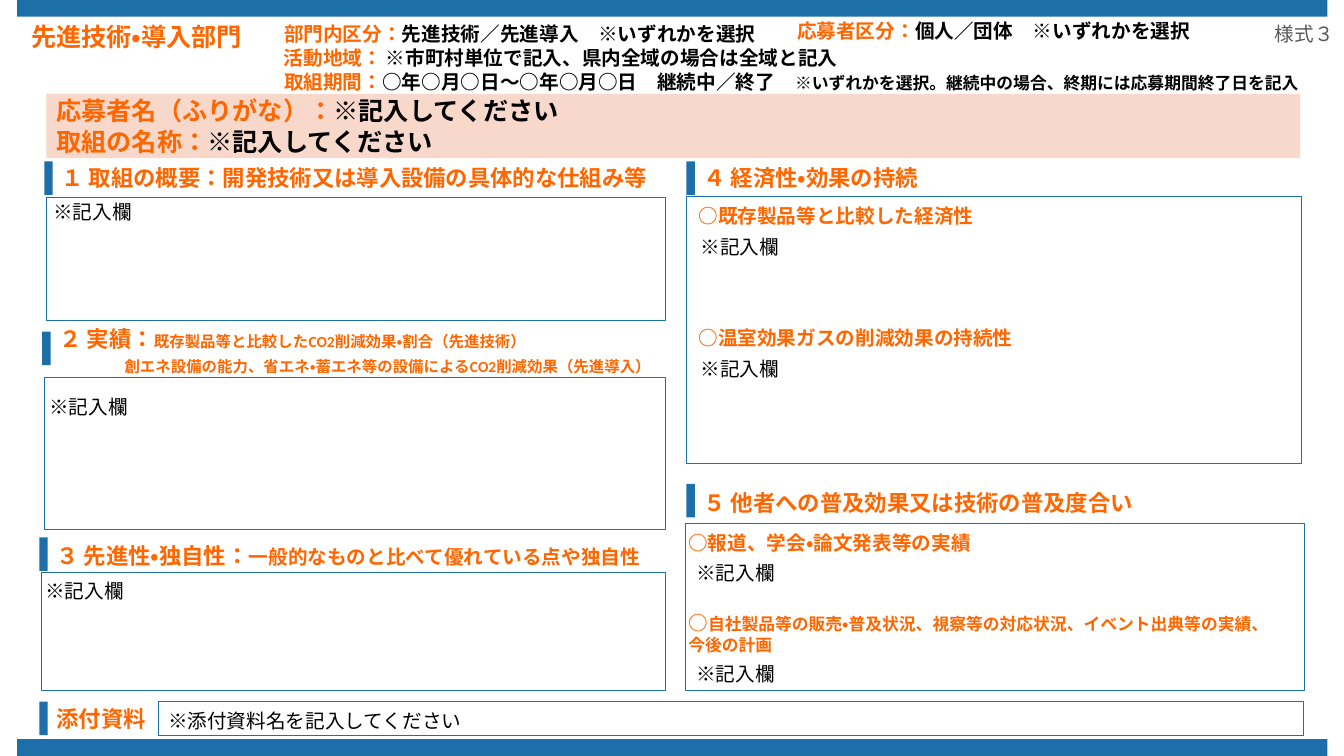
from pptx import Presentation
from pptx.dml.color import RGBColor
from pptx.enum.lang import MSO_LANGUAGE_ID
from pptx.enum.shapes import MSO_SHAPE
from pptx.enum.text import MSO_ANCHOR, PP_ALIGN
from pptx.util import Pt

RECT = MSO_SHAPE.RECTANGLE
MIDDLE = MSO_ANCHOR.MIDDLE
LEFT, CENTER = PP_ALIGN.LEFT, PP_ALIGN.CENTER
TONGUE = MSO_LANGUAGE_ID.JAPANESE
BLUE = RGBColor(0x1D, 0x6F, 0xA9)
ORANGE = RGBColor(0xFF, 0x66, 0x00)
PEACH = RGBColor(0xF8, 0xD8, 0xCA)
BLACK = RGBColor(0, 0, 0)
GRAY = RGBColor(0x59, 0x59, 0x59)
FONT = "Calibri"
WIDE, HIGH = 960, 540
NOTE = [("※記入欄", 14, BLACK)]


def rect(shapes, box, fill=None, line=None):
    shape = shapes.add_shape(RECT, *map(Pt, box))
    shape.shadow.inherit = False
    if fill is None:
        shape.fill.background()
    else:
        shape.fill.solid()
        shape.fill.fore_color.rgb = fill
    if line is None:
        shape.line.fill.background()
    else:
        shape.line.color.rgb = line
        shape.line.width = Pt(0.75)
    return shape


def write(para, runs, bold=True, after=3, align=LEFT):
    para.alignment = align
    para.space_after = Pt(after)
    size, color = runs[0][1:]
    para.font.name = FONT
    para.font.bold = bold
    para.font.size = Pt(size)
    para.font.color.rgb = color
    for words, points, shade in runs:
        run = para.add_run()
        run.text = words
        run.font.language_id = TONGUE
        if points != size:
            run.font.size = Pt(points)
        if shade != color:
            run.font.color.rgb = shade


def text(shapes, box, runs, wrap=True, **style):
    frame = shapes.add_textbox(*map(Pt, box)).text_frame
    frame.word_wrap = wrap
    write(frame.paragraphs[0], runs, **style)
    return frame


def bars(slide):
    for top in (0, HIGH - 12):
        rect(slide.shapes, (12.2, top, WIDE - 24, 12), BLUE)


def header(slide, left, top):
    shapes = slide.shapes
    text(shapes, (left, top, 178, 29), [("先進技術・導入部門", 18, ORANGE)],
         wrap=False, align=CENTER)
    text(shapes, (left + 553.7, top - 1.4, 341, 24),
         [("応募者区分：", 14, ORANGE), ("個人／団体　※いずれかを選択", 14, BLACK)])
    rows = [
        (0.7, 397, [("部門内区分：", 14, ORANGE),
                    ("先進技術／先進導入　※いずれかを選択", 14, BLACK)]),
        (18, 437, [("活動地域：", 14, ORANGE), (" ", 11, BLACK),
                   ("※市町村単位で記入、県内全域の場合は全域と記入", 14, BLACK)]),
        (34.6, 779, [("取組期間：", 14, ORANGE),
                     ("○年○月○日～○年○月○日　継続中／終了　", 14, BLACK),
                     ("※いずれかを選択。継続中の場合、終期には応募期間終了日を記入", 12, BLACK)]),
    ]
    for drop, width, runs in rows:
        text(shapes, (left + 187.2, top + drop, width, 24), runs)
    text(shapes, (left + 895, top + 0.7, 79, 24), [("様式３", 14, GRAY)], bold=False)


def banner(slide, box):
    frame = rect(slide.shapes, box, PEACH).text_frame
    frame.word_wrap = True
    frame.vertical_anchor = MIDDLE
    for i, label in enumerate(("応募者名（ふりがな）：", "取組の名称：")):
        para = frame.add_paragraph() if i else frame.paragraphs[0]
        write(para, [(label, 18, ORANGE), ("※記入してください", 18, BLACK)], after=0)


def title(slide, left, top, width, runs, lift=0):
    shapes = slide.shapes.add_group_shape().shapes
    frame = text(shapes, (left + 5.2, top - lift, width, 26.6), runs, wrap=False)
    rect(shapes, (left, top, 6, 24), BLUE)
    return frame


def panel(slide, box, items):
    rect(slide.shapes, box, line=BLUE)
    left, top, width = box[:3]
    for shift, drop, runs in items:
        text(slide.shapes, (left + shift, top + drop, width - 4, 24), runs,
             bold=runs[0][2] == ORANGE)


def results(slide, left, top):
    frame = title(slide, left, top, 475,
                  [("２ 実績：", 16, ORANGE),
                   ("既存製品等と比較したCO2削減効果・割合（先進技術）", 11, ORANGE)], 4.3)
    frame.margin_top = 0
    para = frame.add_paragraph()
    para._p.get_or_add_pPr().set("marL", str(Pt(46.5)))
    write(para, [("創エネ設備の能力、省エネ・蓄エネ等の設備によるCO2削減効果（先進導入）", 11, ORANGE)])
    panel(slide, (left + 1.5, top + 33.1, 443.5, 108), [(-3.6, 8.6, NOTE)])


def main():
    deck = Presentation()
    deck.slide_width, deck.slide_height = Pt(WIDE), Pt(HIGH)
    slide = deck.slides.add_slide(deck.slide_layouts[6])
    bars(slide)
    header(slide, 8.6, 11.5)
    banner(slide, (33.1, 67, 895.7, 46))

    title(slide, 31.7, 115.2, 435,
          [("１ 取組の概要：開発技術又は導入設備の具体的な仕組み等", 16, ORANGE)], 1.4)
    panel(slide, (33.1, 141.1, 442.1, 87.8), [(-2.1, -2.1, NOTE)])

    results(slide, 30.2, 236.9)

    title(slide, 28.1, 383.8, 443,
          [("３ 先進性・独自性：", 16, ORANGE),
           ("一般的なものと比べて優れている点や独自性", 14, ORANGE)])
    panel(slide, (29.5, 409, 445.7, 84.2), [(-4.3, 0.7, NOTE)])

    title(slide, 490.3, 115.2, 180, [("４ 経済性・効果の持続", 16, ORANGE)], 1.4)
    panel(slide, (490.3, 140.4, 439.2, 190.8), [
        (1.5, 1.4, [("○既存製品等と比較した経済性", 14, ORANGE)]),
        (2.9, 23.8, NOTE),
        (1.5, 88.6, [("○温室効果ガスの削減効果の持続性", 14, ORANGE)]),
        (2.9, 110.9, NOTE)])

    title(slide, 490.3, 345.6, 325,
          [("５ 他者への普及効果又は技術の普及度合い", 16, ORANGE)])
    panel(slide, (489.6, 373.7, 442.1, 119.5), [
        (-5, 2.1, [("○報道、学会・論文発表等の実績", 14, ORANGE)]),
        (0.7, 23.7, NOTE),
        (-5, 59, [("○", 14, ORANGE),
                  ("自社製品等の販売・普及状況、視察等の対応状況、イベント出典等の実績、今後の計画",
                   12, ORANGE)]),
        (0.7, 95.7, NOTE)])

    title(slide, 28.1, 501.1, 79, [("添付資料", 16, ORANGE)], 0.7)
    panel(slide, (113, 501.1, 817.9, 24.5),
          [(0, 1.5, [("※添付資料名を記入してください", 14, BLACK)])])
    deck.save("out.pptx")


if __name__ == "__main__":
    main()
